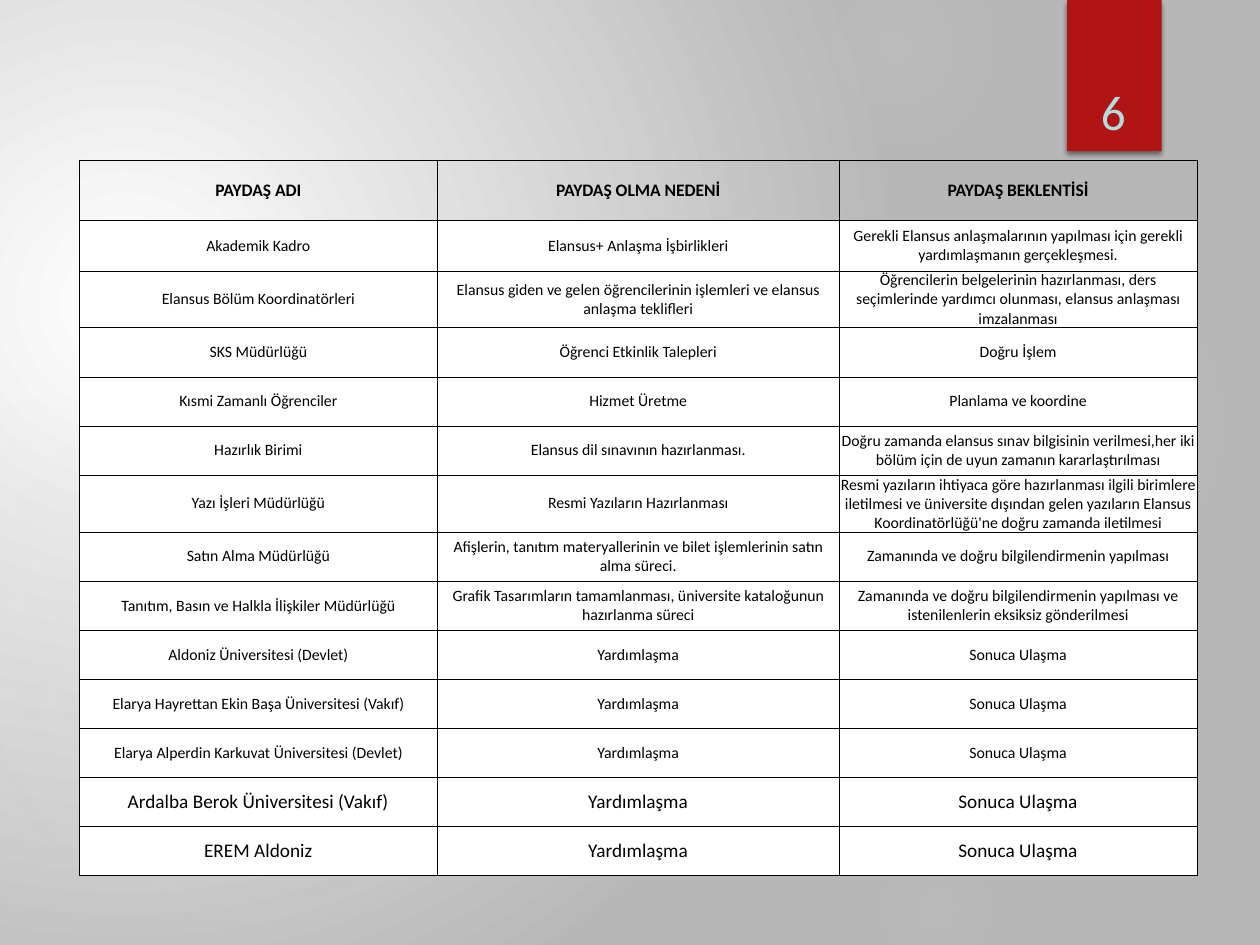
from lxml import etree
from pptx import Presentation
from pptx import util as u
from pptx.dml.color import RGBColor
from pptx.enum import shapes, text
from pptx.oxml import parse_xml
from pptx.oxml.ns import nsdecls, qn

FONT = "Calibri"
HEADER = ("PAYDAŞ ADI", "PAYDAŞ OLMA NEDENİ", "PAYDAŞ BEKLENTİSİ")
HELP = ("Yardımlaşma", "Sonuca Ulaşma")
STAKEHOLDERS = [
    ("Akademik Kadro", "Elansus+ Anlaşma İşbirlikleri",
     "Gerekli Elansus anlaşmalarının yapılması için gerekli yardımlaşmanın gerçekleşmesi."),
    ("Elansus Bölüm Koordinatörleri",
     "Elansus giden ve gelen öğrencilerinin işlemleri ve elansus anlaşma teklifleri",
     "Öğrencilerin belgelerinin hazırlanması, ders seçimlerinde yardımcı olunması, "
     "elansus anlaşması imzalanması"),
    ("SKS Müdürlüğü", "Öğrenci Etkinlik Talepleri", "Doğru İşlem"),
    ("Kısmi Zamanlı Öğrenciler", "Hizmet Üretme", "Planlama ve koordine"),
    ("Hazırlık Birimi", "Elansus dil sınavının hazırlanması.",
     "Doğru zamanda elansus sınav bilgisinin verilmesi,her iki bölüm için de uyun "
     "zamanın kararlaştırılması"),
    ("Yazı İşleri Müdürlüğü", "Resmi Yazıların Hazırlanması",
     "Resmi yazıların ihtiyaca göre hazırlanması ilgili birimlere iletilmesi ve üniversite "
     "dışından gelen yazıların Elansus Koordinatörlüğü'ne doğru zamanda iletilmesi"),
    ("Satın Alma Müdürlüğü",
     "Afişlerin, tanıtım materyallerinin ve bilet işlemlerinin satın alma süreci.",
     "Zamanında ve doğru bilgilendirmenin yapılması"),
    ("Tanıtım, Basın ve Halkla İlişkiler Müdürlüğü",
     "Grafik Tasarımların tamamlanması, üniversite kataloğunun hazırlanma süreci",
     "Zamanında ve doğru bilgilendirmenin yapılması ve istenilenlerin eksiksiz gönderilmesi"),
    ("Aldoniz Üniversitesi (Devlet)", *HELP),
    ("Elarya Hayrettan Ekin Başa Üniversitesi (Vakıf)", *HELP),
    ("Elarya Alperdin Karkuvat Üniversitesi (Devlet)", *HELP),
]
LARGE_ROWS = [
    ("Ardalba Berok Üniversitesi (Vakıf)", *HELP),
    ("EREM Aldoniz", *HELP),
]
ROWS = ([(HEADER, 10, 0.48)]
        + [(row, 9, 0.4 if index == 0 else 0.39) for index, row in enumerate(STAKEHOLDERS)]
        + [(row, 11, 0.39) for row in LARGE_ROWS])
COLUMNS = (2.84, 3.19, 2.84)

GLOWS = [
    (6.89, 1.83, 3.08, ((0, 7), (36, 6), (69, 0))),
    (6.22, -0.5, 1.75, ((0, 14), (36, 7), (73, 0))),
    (6.89, 6.67, 1.08, ((0, 9), (36, 5), (66, 0))),
    (-0.17, 2.92, 4.58, ((0, 11), (36, 10), (75, 0))),
    (-0.92, 3.17, 2.58, ((0, 8), (36, 8), (72, 0))),
]


def color(value):
    return RGBColor.from_string(value)


def inches(*values):
    return [u.Inches(value) for value in values]


def radial_fill(fill, element, stops, focus):
    fill.solid()
    fill.fore_color.rgb = color("FFFFFF")
    solid = element.xpath(".//a:solidFill")[0]
    stop_xml = "".join(
        f'<a:gs pos="{position * 1000}"><a:srgbClr val="{value}">'
        f'<a:alpha val="{alpha * 1000}"/></a:srgbClr></a:gs>'
        for position, value, alpha in stops)
    edges = " ".join(f'{side}="{share * 1000}"' for side, share in zip("ltrb", focus))
    gradient = parse_xml(
        f'<a:gradFill {nsdecls("a")} rotWithShape="1"><a:gsLst>{stop_xml}</a:gsLst>'
        f'<a:path path="circle"><a:fillToRect {edges}/></a:path></a:gradFill>')
    solid.getparent().replace(solid, gradient)


def add_plain_shape(slide, kind, *box):
    shape = slide.shapes.add_shape(kind, *inches(*box))
    shape.shadow.inherit = False
    shape.line.fill.background()
    return shape


def add_glows(slide):
    for left, top, size, stops in GLOWS:
        glow = add_plain_shape(slide, shapes.MSO_SHAPE.OVAL, left, top, size, size)
        radial_fill(glow.fill, glow.element,
                    [(position, "D9D9D9", alpha) for position, alpha in stops],
                    (50, 50, 50, 50))


def set_text(frame, content, size, value, bold=False):
    frame.text = content
    paragraph = frame.paragraphs[0]
    paragraph.alignment = text.PP_ALIGN.CENTER
    font = paragraph.font
    font.name, font.size, font.bold = FONT, u.Pt(size), bold
    font.color.rgb = color(value)


def add_number_ribbon(slide):
    ribbon = add_plain_shape(slide, shapes.MSO_SHAPE.RECTANGLE, 8.47, 0, 0.75, 1.2)
    ribbon.fill.solid()
    ribbon.fill.fore_color.rgb = color("B01513")
    effects = ribbon.element.spPr.find(qn("a:effectLst"))
    effects.append(parse_xml(
        f'<a:outerShdw {nsdecls("a")} blurRad="{u.Pt(3)}" dist="{u.Pt(2)}" dir="5400000">'
        '<a:srgbClr val="000000"><a:alpha val="45000"/></a:srgbClr></a:outerShdw>'))
    frame = slide.shapes.add_textbox(*inches(8.49, 0.32, 0.69, 0.84)).text_frame
    frame.word_wrap = True
    frame.vertical_anchor = text.MSO_ANCHOR.BOTTOM
    set_text(frame, "6", 28, "B1DDE0")


def add_borders(cell):
    properties = cell._tc.get_or_add_tcPr()
    for side in "LRTB":
        line = etree.SubElement(properties, qn(f"a:ln{side}"), w=str(u.Pt(0.5)))
        fill = etree.SubElement(line, qn("a:solidFill"))
        etree.SubElement(fill, qn("a:srgbClr"), val="000000")


def add_stakeholder_table(slide):
    height = sum(row_height for _, _, row_height in ROWS)
    table = slide.shapes.add_table(
        len(ROWS), len(COLUMNS), *inches(0.63, 1.27, sum(COLUMNS), height)).table
    table.first_row = table.horz_banding = False
    for column, width in zip(table.columns, COLUMNS):
        column.width = u.Inches(width)
    for row, (contents, size, row_height) in zip(table.rows, ROWS):
        row.height = u.Inches(row_height)
        is_header = contents is HEADER
        for cell, content in zip(row.cells, contents):
            cell.margin_left = cell.margin_right = cell.margin_top = cell.margin_bottom = 0
            cell.vertical_anchor = text.MSO_ANCHOR.MIDDLE
            add_borders(cell)
            if is_header:
                cell.fill.background()
            else:
                cell.fill.solid()
                cell.fill.fore_color.rgb = color("FFFFFF")
            set_text(cell.text_frame, content, size, "000000", is_header)


def main():
    presentation = Presentation()
    presentation.slide_width, presentation.slide_height = inches(10, 7.5)
    slide = presentation.slides.add_slide(presentation.slide_layouts[6])
    radial_fill(slide.background.fill, slide.element,
                [(0, "FFFFFF", 100), (100, "B7B7B7", 100)], (45, 65, 125, 100))
    add_glows(slide)
    add_number_ribbon(slide)
    add_stakeholder_table(slide)
    presentation.save("out.pptx")


if __name__ == "__main__":
    main()
